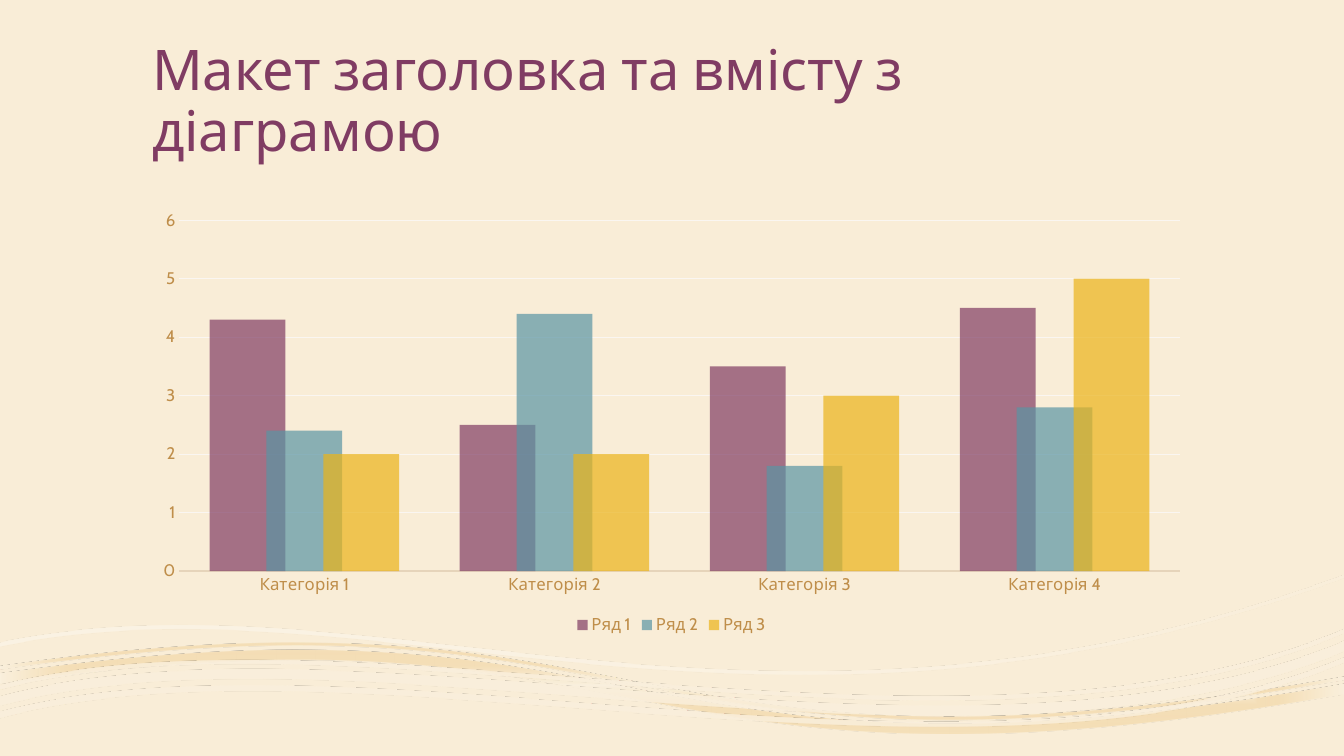
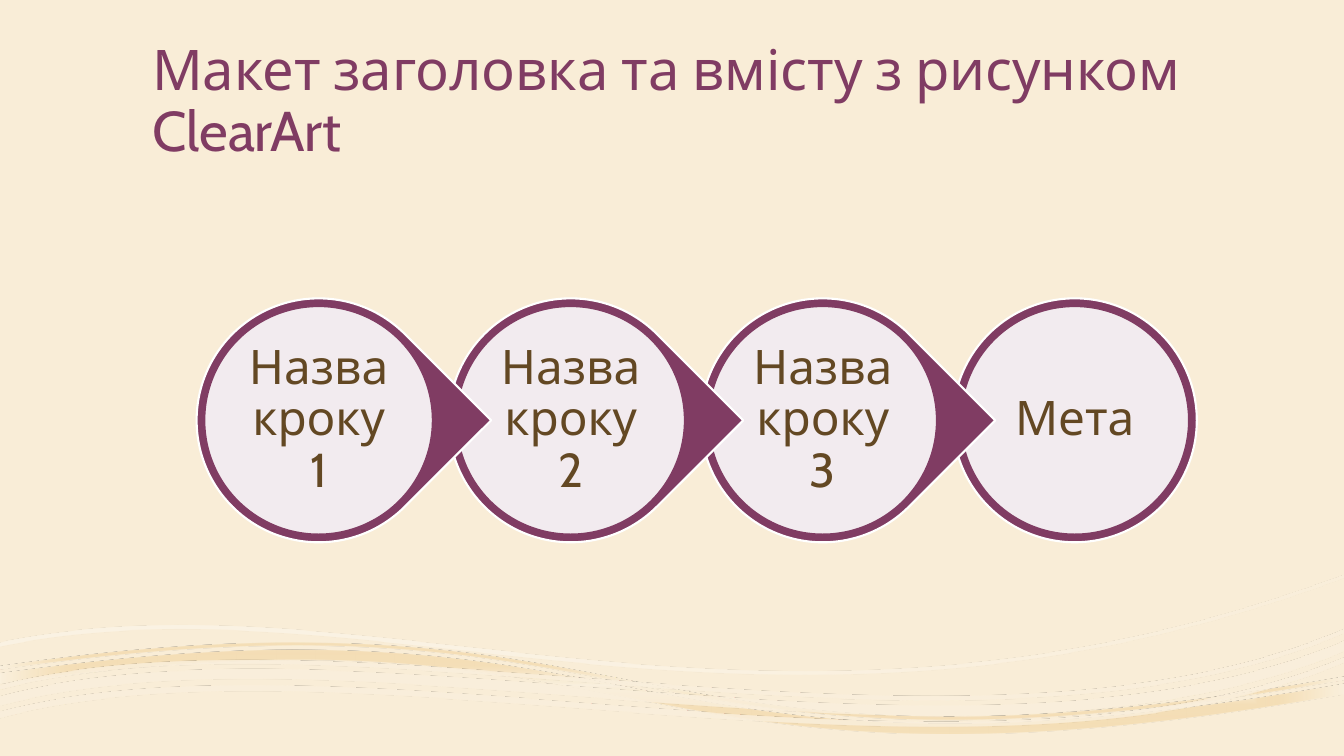
import math
from dataclasses import dataclass

from lxml import etree
from pptx import Presentation
from pptx import util as u
from pptx.chart.data import CategoryChartData
from pptx.dml.color import RGBColor
from pptx.enum import chart as ch, shapes, text
from pptx.oxml import parse_xml
from pptx.oxml.ns import nsdecls, qn


@dataclass(frozen=True)
class Theme:
    font: str = "Cabin"
    paper: str = "F9EDD7"
    plum: str = "803C63"
    teal: str = "5A95A4"
    gold: str = "EBB419"
    brown: str = "634823"
    label: str = "BF8E4A"
    axis: str = "E6D4BA"
    grid: str = "FAF6F1"
    white: str = "FFFFFF"
    title_size: int = 40
    step_size: int = 34
    label_size: int = 12


@dataclass(frozen=True)
class Wave:
    """Ribbons of (x, y) lines and (x1, y1, x2, y2, x, y) curves, as seen on the slide."""
    box: tuple
    ribbons: tuple
    stops: tuple
    direction: str


WAVE_TILT = -3.5
WAVES = (
    Wave(
        (0.01, 6.12, 13.31, 1.35),
        (((3.06, 6.45), (6.7, 6.47, 7.38, 7.82, 13.33, 6.78), (13.33, 6.88),
          (6.02, 8.16, 6.67, 5.83, 0, 6.78), (0, 6.68), (1.24, 6.51, 2.22, 6.44, 3.06, 6.45)),
         ((3.06, 6.38), (6.7, 6.4, 7.38, 7.75, 13.33, 6.71), (13.33, 6.74),
          (6.02, 8.02, 6.67, 5.69, 0, 6.64), (0, 6.61), (1.24, 6.43, 2.22, 6.37, 3.06, 6.38))),
        ((0, "FAF1DF", 90), (18, "F4DEB7", 100), (37, "F4DDB3", 90), (100, "FAF1DF", 100)),
        '<a:path path="shape"><a:fillToRect l="50000" t="50000" r="50000" b="50000"/></a:path>'),
    Wave(
        (0.03, 5.88, 13.35, 1.71),
        (((13.33, 5.7), (13.33, 5.73), (7.54, 7.88, 3.73, 5.63, 0, 6.41),
          (0, 6.37), (3.73, 5.59, 7.54, 7.84, 13.33, 5.7)),),
        ((36, "FFFFFF", 30), (100, "F9EDD7", 48)),
        '<a:lin ang="2700000" scaled="0"/>'),
    Wave(
        (-0.01, 6.25, 13.36, 1.15),
        (((13.33, 6.52), (13.33, 6.57), (9.55, 8.15, 3.49, 6.18, 0, 7.12),
          (0, 7.06), (3.49, 6.12, 9.55, 8.1, 13.33, 6.52)),
         ((13.33, 6.36), (13.33, 6.46), (9.55, 8.04, 3.49, 6.06, 0, 7),
          (0, 6.91), (3.49, 5.96, 9.55, 7.94, 13.33, 6.36)),
         ((13.33, 6.24), (13.33, 6.28), (9.58, 7.9, 3.51, 5.93, 0, 6.84),
          (0, 6.8), (3.51, 5.89, 9.58, 7.86, 13.33, 6.24))),
        ((36, "FFFFFF", 47), (100, "FAEFDC", 82)),
        '<a:path path="rect"><a:fillToRect l="100000" t="100000"/></a:path>'),
)


def rgb(value):
    return RGBColor.from_string(value)


def untilt(x, y, box):
    """Turn a slide point back around the box centre, measured from the box corner."""
    left, top, width, height = box
    dx, dy = x - left - width / 2, y - top - height / 2
    angle = math.radians(-WAVE_TILT)
    return (dx * math.cos(angle) - dy * math.sin(angle) + width / 2,
            dx * math.sin(angle) + dy * math.cos(angle) + height / 2)


def draw_ribbons(outline, wave):
    """Fill a freeform's outline with the wave's lines and curves."""
    for child in list(outline):
        outline.remove(child)
    for ribbon in wave.ribbons:
        for i, segment in enumerate(ribbon):
            tag = "a:moveTo" if i == 0 else "a:lnTo" if len(segment) == 2 else "a:cubicBezTo"
            command = etree.SubElement(outline, qn(tag))
            for point in zip(segment[::2], segment[1::2]):
                x, y = untilt(*point, wave.box)
                pt = etree.SubElement(command, qn("a:pt"))
                pt.set("x", str(u.Inches(x)))
                pt.set("y", str(u.Inches(y)))
        etree.SubElement(outline, qn("a:close"))


def set_alpha(colors, percent):
    for color in colors:
        etree.SubElement(color, qn("a:alpha")).set("val", str(percent * 1000))


class Deck:
    def __init__(self, theme):
        self.theme = theme
        self.prs = Presentation()
        self.prs.slide_width, self.prs.slide_height = u.Inches(13.33), u.Inches(7.5)
        fill = self.prs.slide_master.background.fill
        fill.solid()
        fill.fore_color.rgb = rgb(theme.paper)

    def add_slide(self, title):
        self.s = self.prs.slides.add_slide(self.prs.slide_layouts[6])
        group = self.s.shapes.add_group_shape()
        for wave in WAVES:
            self.wave(group, wave)
        tf = self.text(title, (1.41, 0.33, 10.5, 1.34), self.theme.title_size, self.theme.plum)
        tf.vertical_anchor = text.MSO_ANCHOR.BOTTOM

    def wave(self, group, wave):
        left, top, width, height = map(u.Inches, wave.box)
        builder = group.shapes.build_freeform(left, top)
        builder.add_line_segments([(left + width, top + height)])
        sp = builder.convert_to_shape()
        draw_ribbons(sp.element.spPr.find(".//" + qn("a:path")), wave)
        sp.rotation = WAVE_TILT
        sp.shadow.inherit = False
        sp.line.fill.background()
        sp.fill.solid()
        stops = "".join(
            f'<a:gs pos="{pos * 1000}"><a:srgbClr val="{color}">'
            f'<a:alpha val="{alpha * 1000}"/></a:srgbClr></a:gs>'
            for pos, color, alpha in wave.stops)
        gradient = parse_xml(f'<a:gradFill {nsdecls("a")} rotWithShape="1">'
                             f'<a:gsLst>{stops}</a:gsLst>{wave.direction}</a:gradFill>')
        solid = sp.element.spPr.find(qn("a:solidFill"))
        solid.getparent().replace(solid, gradient)

    def style(self, font, size, color):
        font.name, font.size, font.color.rgb = self.theme.font, u.Pt(size), rgb(color)

    def text(self, words, box, size, color):
        tf = self.s.shapes.add_textbox(*map(u.Inches, box)).text_frame
        tf.word_wrap = True
        tf.text = words
        p = tf.paragraphs[0]
        p.line_spacing = 0.9
        self.style(p.runs[0].font, size, color)
        return tf

    def shape(self, kind, box, fill, line, width):
        sp = self.s.shapes.add_shape(kind, *map(u.Inches, box))
        sp.shadow.inherit = False
        sp.fill.solid()
        sp.fill.fore_color.rgb = rgb(fill)
        sp.line.color.rgb = rgb(line)
        sp.line.width = u.Pt(width)
        return sp

    def step(self, words, left, top, is_goal):
        """Draw a ringed step; every step but the goal points to the right."""
        t, kinds = self.theme, shapes.MSO_SHAPE
        outer, rim, inset = 2.42, 0.08, 0.4

        def inner(gap):
            return left + gap, top + gap, outer - 2 * gap, outer - 2 * gap

        ring = self.shape(kinds.OVAL if is_goal else kinds.TEAR, inner(0), t.plum, t.white, 1.5)
        if not is_goal:
            ring.rotation = 45
        disc = self.shape(kinds.OVAL, inner(rim), t.white, t.plum, 1)
        set_alpha(disc.element.xpath("./p:spPr/a:solidFill/a:srgbClr"), 90)
        tf = self.text(words, inner(inset), t.step_size, t.brown)
        tf.vertical_anchor = text.MSO_ANCHOR.MIDDLE
        tf.margin_left = tf.margin_right = tf.margin_top = tf.margin_bottom = u.Inches(0.05)
        tf.paragraphs[0].alignment = text.PP_ALIGN.CENTER

    def column_chart(self, box, categories, series):
        t = self.theme
        data = CategoryChartData()
        data.categories = categories
        for name, values, _ in series:
            data.add_series(name, values)
        chart = self.s.shapes.add_chart(ch.XL_CHART_TYPE.COLUMN_CLUSTERED,
                                        *map(u.Inches, box), data).chart
        self.style(chart.font, t.label_size, t.label)
        chart.has_title = False
        chart.has_legend = True
        chart.legend.position = ch.XL_LEGEND_POSITION.BOTTOM
        chart.legend.include_in_layout = False
        self.style(chart.legend.font, t.label_size, t.label)

        plot = chart.plots[0]
        plot.vary_by_categories = False
        plot.gap_width, plot.overlap = 80, 25
        for columns, (_, _, color) in zip(plot.series, series):
            columns.format.fill.solid()
            columns.format.fill.fore_color.rgb = rgb(color)
        set_alpha(chart.element.xpath(".//c:ser/c:spPr/a:solidFill/a:srgbClr"), 70)

        for axis in (chart.category_axis, chart.value_axis):
            axis.major_tick_mark = axis.minor_tick_mark = ch.XL_TICK_MARK.NONE
            self.style(axis.tick_labels.font, t.label_size, t.label)
        line = chart.category_axis.format.line
        line.color.rgb, line.width = rgb(t.axis), u.Pt(1.25)
        axis = chart.value_axis
        axis.minimum_scale, axis.maximum_scale, axis.major_unit = 0, 6, 1
        axis.format.line.fill.background()
        grid = axis.major_gridlines.format.line
        grid.color.rgb, grid.width = rgb(t.grid), u.Pt(0.75)


def main():
    theme = Theme()
    deck = Deck(theme)

    deck.add_slide("Макет заголовка та вмісту з діаграмою")
    deck.column_chart(
        (1.41, 2, 10.5, 4.34),
        [f"Категорія {n}" for n in range(1, 5)],
        [("Ряд 1", (4.3, 2.5, 3.5, 4.5), theme.plum),
         ("Ряд 2", (2.4, 4.4, 1.8, 2.8), theme.teal),
         ("Ряд 3", (2, 2, 3, 5), theme.gold)])

    deck.add_slide("Макет заголовка та вмісту з рисунком ClearArt")
    steps = ["Назва кроку 1", "Назва кроку 2", "Назва кроку 3", "Мета"]
    goal = len(steps) - 1
    for i in reversed(range(len(steps))):  # each pointer overlaps the next ring
        deck.step(steps[i], 1.95 + 2.5 * i, 2.96, i == goal)

    deck.prs.save("out.pptx")


if __name__ == "__main__":
    main()
